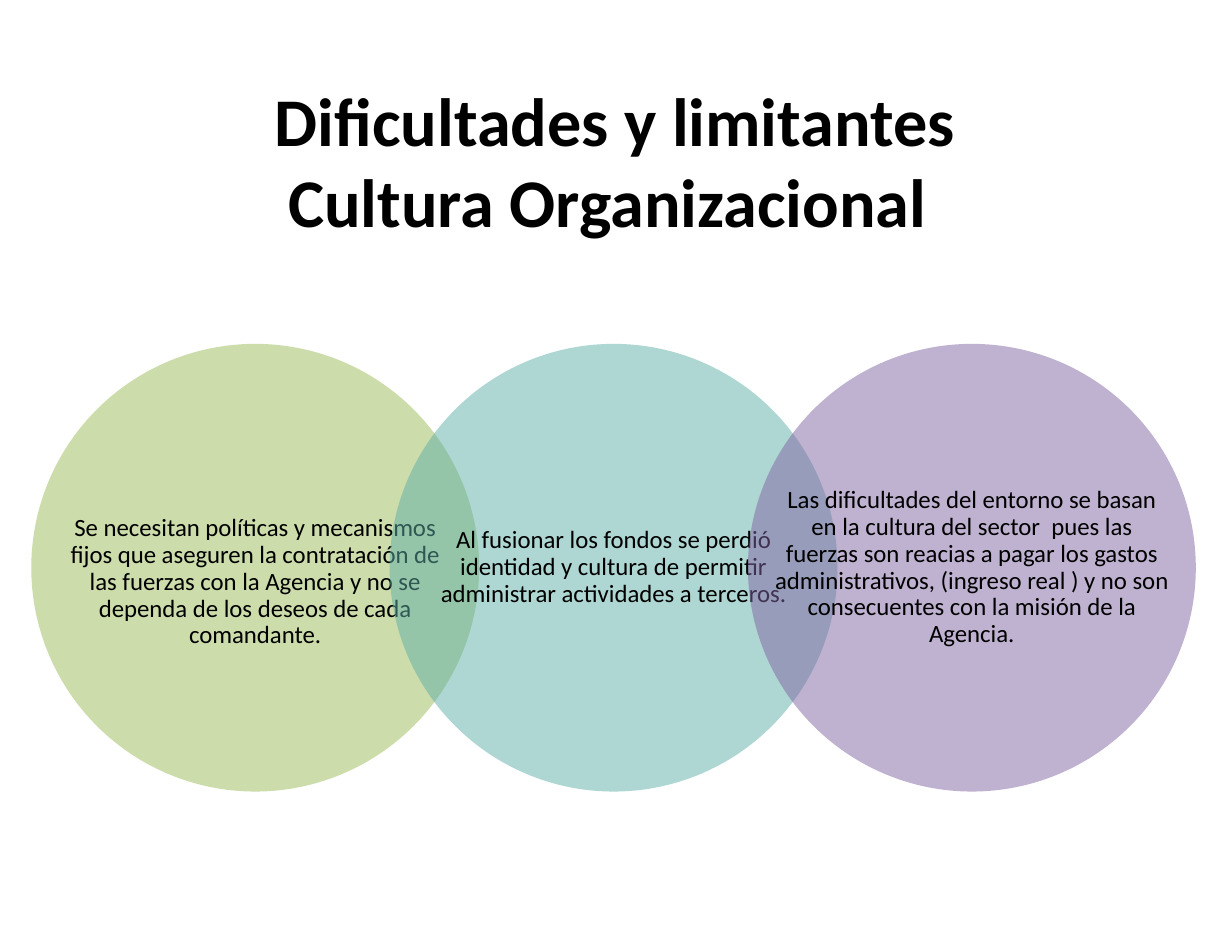
from dataclasses import dataclass

from lxml.etree import SubElement
from pptx import Presentation
from pptx.dml.color import RGBColor
from pptx.enum.shapes import MSO_SHAPE
from pptx.enum.text import MSO_ANCHOR, PP_ALIGN
from pptx.oxml.ns import qn
from pptx.util import Inches, Pt


@dataclass(frozen=True)
class Theme:
    font: str = "Calibri"
    ink: RGBColor = RGBColor(0, 0, 0)
    circle_colors: tuple = ("9BBB59", "5EAFA6", "8064A2")
    opacity_percent: int = 50
    title_size: int = 44
    body_size: int = 16


THEME = Theme()

TITLE = "Dificultades y limitantes\vCultura Organizacional "

DIFFICULTIES = [
    ("Se necesitan políticas y mecanismos fijos que aseguren la contratación "
     "de las fuerzas con la Agencia y no se dependa de los deseos de cada "
     "comandante.", 0.26),
    ("Al fusionar los fondos se perdió identidad y cultura de permitir "
     "administrar actividades a terceros.", 0),
    ("Las dificultades del entorno se basan en la cultura del sector  pues las "
     "fuerzas son reacias a pagar los gastos administrativos, (ingreso real ) "
     "y no son consecuentes con la misión de la Agencia.", 0),
]


def add_centered_text(slide, text, left, top, width, height, size,
                      side_inset, top_inset, bottom_inset,
                      bold=False, line_spacing=1.0):
    shape = slide.shapes.add_textbox(
        Inches(left), Inches(top), Inches(width), Inches(height))
    frame = shape.text_frame
    frame.word_wrap = True
    frame.vertical_anchor = MSO_ANCHOR.MIDDLE
    frame.margin_left = frame.margin_right = Inches(side_inset)
    frame.margin_top = Inches(top_inset)
    frame.margin_bottom = Inches(bottom_inset)
    paragraph = frame.paragraphs[0]
    paragraph.text = text
    paragraph.alignment = PP_ALIGN.CENTER
    paragraph.line_spacing = line_spacing
    paragraph.font.name = THEME.font
    paragraph.font.size = Pt(size)
    paragraph.font.bold = bold
    paragraph.font.color.rgb = THEME.ink


def add_title(slide, left, top, width, height):
    add_centered_text(slide, TITLE, left, top, width, height, THEME.title_size,
                      side_inset=0.11, top_inset=0.06, bottom_inset=0.06,
                      bold=True)


def add_circle(slide, left, top, diameter, color):
    circle = slide.shapes.add_shape(
        MSO_SHAPE.OVAL, Inches(left), Inches(top),
        Inches(diameter), Inches(diameter))
    circle.shadow.inherit = False
    circle.line.fill.background()
    circle.fill.solid()
    circle.fill.fore_color.rgb = RGBColor.from_string(color)
    color_element = circle.fill._xPr.find(qn("a:solidFill"))[0]
    alpha = SubElement(color_element, qn("a:alpha"))
    alpha.set("val", str(THEME.opacity_percent * 1000))


def add_overlapping_circles(slide, left, top, diameter, overlap=0.2):
    step = diameter * (1 - overlap)
    for index, (text, text_drop) in enumerate(DIFFICULTIES):
        circle_left = left + index * step
        add_circle(slide, circle_left, top, diameter,
                   THEME.circle_colors[index])
        add_centered_text(slide, text, circle_left, top, diameter, diameter,
                          THEME.body_size, side_inset=0.22,
                          top_inset=0.02 + text_drop, bottom_inset=0.02,
                          line_spacing=0.9)


def main():
    presentation = Presentation()
    presentation.slide_width = Inches(11.03)
    presentation.slide_height = Inches(8.5)
    slide = presentation.slides.add_slide(presentation.slide_layouts[6])
    add_overlapping_circles(slide, 0.28, 3.08, 4.01)
    add_title(slide, 0.25, 0.72, 10.52, 1.42)
    presentation.save("out.pptx")


if __name__ == "__main__":
    main()
